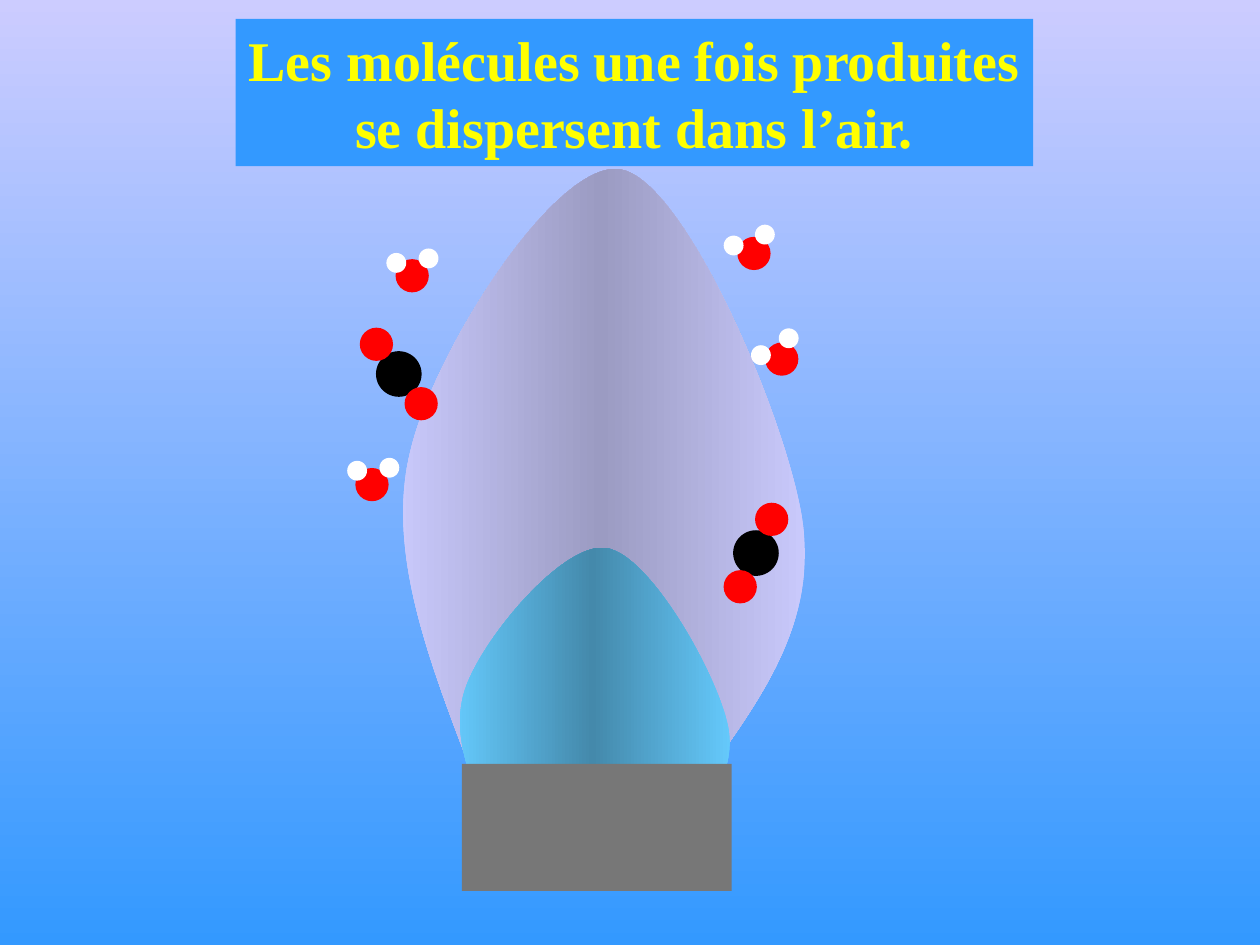
from copy import deepcopy
from dataclasses import dataclass
from math import cos, radians, sin

from lxml import etree
from pptx import Presentation
from pptx import util as u
from pptx.dml.color import RGBColor
from pptx.enum import shapes, text
from pptx.oxml.ns import qn


@dataclass(frozen=True)
class Theme:
    sky: tuple = ("CCCCFF", "3399FF")
    outer_flame: tuple = ("CCCCFF", "9B9BC2")
    inner_flame: tuple = ("66CCFF", "4489AB")
    burner: str = "777777"
    carbon: str = "000000"
    oxygen: str = "FF0000"
    hydrogen: str = "FFFFFF"
    title_box: str = "3399FF"
    title_text: str = "FFFF00"
    title_font: str = "Times New Roman"
    title_size: int = 32


THEME = Theme()
DIAMETER = {"carbon": 0.92, "oxygen": 0.67, "hydrogen": 0.4}
BOND = 0.75

TITLE = ("Les molécules une fois produites", "se dispersent dans l’air.")

# Start point, then Bézier triples (control, control, end), in cm
OUTER_FLAME = [
    (9.47, 15.47),
    (8.64, 13.28), (7.77, 11.07), (8.28, 9.07),
    (8.76, 7.06), (11.23, 3.18), (12.52, 3.42),
    (13.82, 3.66), (15.88, 8.48), (16.18, 10.52),
    (16.46, 12.52), (15.39, 14.0), (14.35, 15.47),
]
INNER_FLAME = [
    (10.19, 17.2),
    (9.63, 16.08), (9.04, 14.96), (9.37, 13.92),
    (9.7, 12.9), (11.35, 10.92), (12.22, 11.05),
    (13.11, 11.18), (14.48, 13.64), (14.68, 14.66),
    (14.86, 15.67), (14.15, 16.43), (13.44, 17.2),
]

# Carbon centre and axis angle in degrees
CARBON_DIOXIDES = [((15.24, 11.15), -65), ((8.04, 7.54), 53)]
# Oxygen centre, then both hydrogen centres
WATERS = [
    ((15.76, 7.24), (15.9, 6.82), (15.34, 7.16)),
    ((7.5, 9.77), (7.85, 9.43), (7.2, 9.49)),
    ((15.2, 5.11), (15.42, 4.73), (14.79, 4.95)),
    ((8.31, 5.56), (8.64, 5.21), (7.99, 5.3)),
]


def rgb(value):
    return RGBColor.from_string(value)


def paint(shape, color):
    shape.fill.solid()
    shape.fill.fore_color.rgb = rgb(color)
    shape.line.fill.background()
    shape.shadow.inherit = False


def set_gradient(fill, colors, angle):
    fill.gradient()
    fill.gradient_angle = angle
    for position, (stop, color) in enumerate(zip(fill.gradient_stops, colors)):
        stop.color.rgb = rgb(color)
        stop.position = position


def add_block(parent, kind, box, color):
    block = parent.add_shape(kind, *(u.Cm(length) for length in box))
    paint(block, color)
    return block


def add_curve(parent, points):
    """Build a freeform, then turn each three segments into one cubic curve."""
    start, *rest = [(u.Cm(x), u.Cm(y)) for x, y in points]
    builder = parent.build_freeform(*start)
    builder.add_line_segments(rest, close=False)
    curve = builder.convert_to_shape()
    outline = next(curve.element.iter(qn("a:path")))
    segments = outline.findall(qn("a:lnTo"))
    for i in range(0, len(segments), 3):
        cubic = etree.SubElement(outline, qn("a:cubicBezTo"))
        for segment in segments[i:i + 3]:
            cubic.append(segment[0])
            outline.remove(segment)
    return curve


def add_flame(parent, points, colors):
    """Draw a flame with its edge colour on both sides and its core between."""
    edge, core = colors
    flame = add_curve(parent, points)
    paint(flame, edge)
    set_gradient(flame.fill, (edge, core), 0)
    stops = next(flame.element.iter(qn("a:gsLst")))
    stops[1].set("pos", "50000")
    far_edge = deepcopy(stops[0])
    far_edge.set("pos", "100000")
    stops.append(far_edge)


def add_atom(molecule, element, center):
    size = DIAMETER[element]
    x, y = center
    add_block(molecule, shapes.MSO_SHAPE.OVAL,
              (x - size / 2, y - size / 2, size, size), getattr(THEME, element))


def add_carbon_dioxide(slide, center, angle):
    molecule = slide.shapes.add_group_shape().shapes
    add_atom(molecule, "carbon", center)
    dx, dy = BOND * cos(radians(angle)), BOND * sin(radians(angle))
    for side in (1, -1):
        add_atom(molecule, "oxygen", (center[0] + side * dx, center[1] + side * dy))


def add_water(slide, oxygen, *hydrogens):
    molecule = slide.shapes.add_group_shape().shapes
    add_atom(molecule, "oxygen", oxygen)
    for hydrogen in hydrogens:
        add_atom(molecule, "hydrogen", hydrogen)


def add_lit_burner(slide):
    burner = slide.shapes.add_group_shape().shapes
    add_flame(burner, OUTER_FLAME, THEME.outer_flame)
    add_flame(burner, INNER_FLAME, THEME.inner_flame)
    add_block(burner, shapes.MSO_SHAPE.RECTANGLE, (9.31, 15.4, 5.44, 2.56), THEME.burner)


def add_title(slide):
    title = slide.shapes.add_textbox(u.Cm(4.75), u.Cm(0.38), u.Cm(16.08), u.Cm(2.97))
    title.fill.solid()
    title.fill.fore_color.rgb = rgb(THEME.title_box)
    frame = title.text_frame
    frame.word_wrap = False
    frame.auto_size = text.MSO_AUTO_SIZE.SHAPE_TO_FIT_TEXT
    frame.text = "\n".join(TITLE)
    for paragraph in frame.paragraphs:
        paragraph.alignment = text.PP_ALIGN.CENTER
        font = paragraph.runs[0].font
        font.name = THEME.title_font
        font.size = u.Pt(THEME.title_size)
        font.bold = True
        font.color.rgb = rgb(THEME.title_text)


def main():
    deck = Presentation()
    deck.slide_width, deck.slide_height = u.Cm(25.4), u.Cm(19.05)
    slide = deck.slides.add_slide(deck.slide_layouts[6])
    set_gradient(slide.background.fill, THEME.sky, 270)
    add_lit_burner(slide)
    for center, angle in CARBON_DIOXIDES:
        add_carbon_dioxide(slide, center, angle)
    for atoms in WATERS:
        add_water(slide, *atoms)
    add_title(slide)
    deck.save("out.pptx")


if __name__ == "__main__":
    main()
